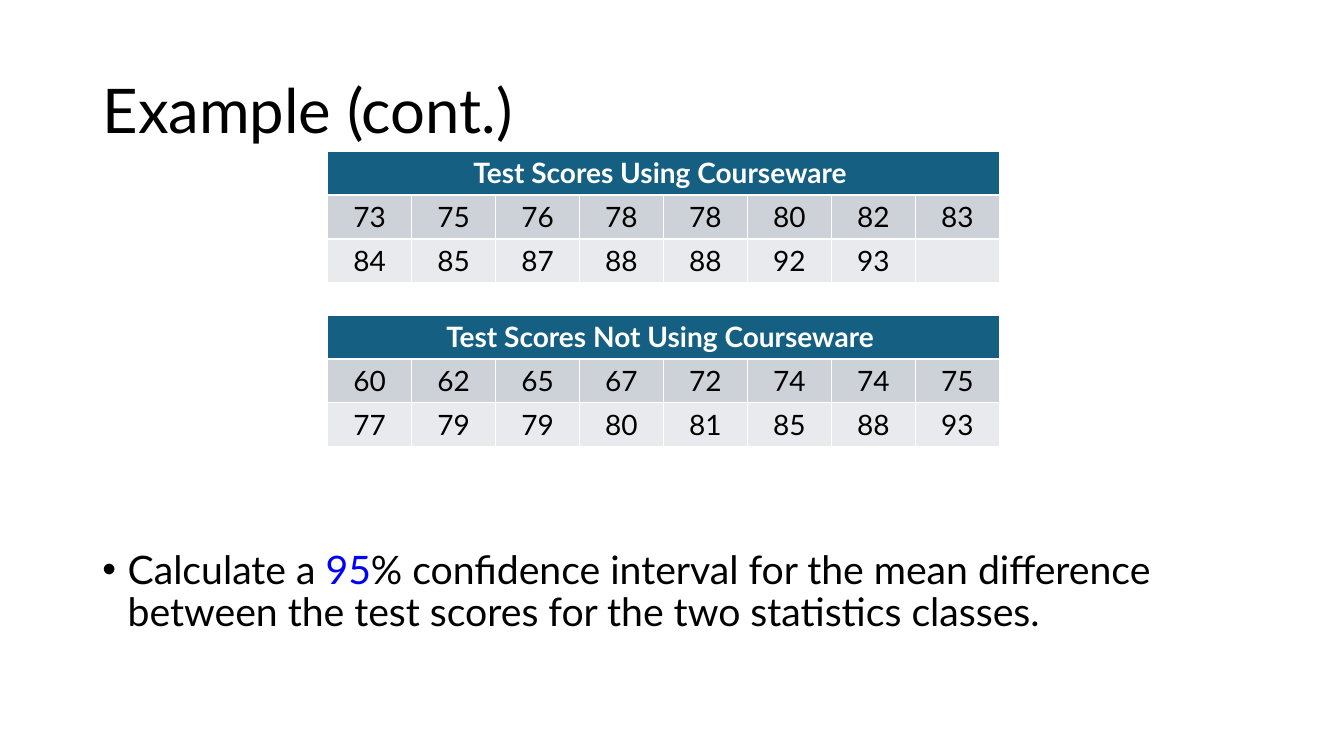
from dataclasses import dataclass

from pptx import Presentation
from pptx.dml.color import RGBColor as Rgb
from pptx.enum.text import MSO_ANCHOR as Anchor, MSO_AUTO_SIZE as Fit, PP_ALIGN as Align
from pptx.util import Pt


@dataclass(frozen=True)
class Theme:
    """Colours, font and type sizes of the slide."""
    font: str = "Lato"
    ink: str = "000000"
    mark: str = "0000FF"
    pale: str = "FFFFFF"
    head: str = "156082"
    bands: tuple = ("CCD2D8", "E8EAED")
    title: int = 44
    body: int = 28
    cell: int = 20


THEME = Theme()
USING = [[73, 75, 76, 78, 78, 80, 82, 83], [84, 85, 87, 88, 88, 92, 93, ""]]
OTHER = [[60, 62, 65, 67, 72, 74, 74, 75], [77, 79, 79, 80, 81, 85, 88, 93]]


def write(para, text, size, color=THEME.ink, bold=False, align=Align.LEFT):
    """Add a formatted run to a paragraph."""
    para.alignment = align
    run = para.add_run()
    run.text = text
    font = run.font
    font.name, font.size, font.bold = THEME.font, Pt(size), bold
    font.color.rgb = Rgb.from_string(color)


def place(holder, left, top, width, height, anchor):
    """Move a placeholder and return its first paragraph."""
    holder.left, holder.top = Pt(left), Pt(top)
    holder.width, holder.height = Pt(width), Pt(height)
    frame = holder.text_frame
    frame.auto_size, frame.vertical_anchor = Fit.NONE, anchor
    para = frame.paragraphs[0]
    para.line_spacing, para.space_before = 0.9, Pt(0)
    return para


def paint(cell, fill, text, **style):
    """Fill a table cell and centre its text."""
    cell.fill.solid()
    cell.fill.fore_color.rgb = Rgb.from_string(fill)
    if text:
        write(cell.text_frame.paragraphs[0], text, THEME.cell, align=Align.CENTER, **style)


def scores(slide, top, title, rows):
    """Add a score table under a merged heading."""
    count, width, height = len(rows[0]), 60, 31.2
    lines = len(rows) + 1
    table = slide.shapes.add_table(
        lines, count, Pt(234), Pt(top), Pt(count * width), Pt(lines * height)
    ).table
    for col in table.columns:
        col.width = Pt(width)
    for row in table.rows:
        row.height = Pt(height)
    table.cell(0, 0).merge(table.cell(0, count - 1))
    paint(table.cell(0, 0), THEME.head, title, color=THEME.pale, bold=True)
    for r, (row, band) in enumerate(zip(rows, THEME.bands), 1):
        for c, score in enumerate(row):
            paint(table.cell(r, c), band, str(score))


def main():
    """Build and save the slide."""
    deck = Presentation()
    deck.slide_width, deck.slide_height = Pt(960), Pt(540)
    slide = deck.slides.add_slide(deck.slide_layouts[1])
    title, body = slide.placeholders

    para = place(title, 66, 28.8, 828, 104.4, Anchor.MIDDLE)
    write(para, "Example (cont.)", THEME.title)

    para = place(body, 66, 144, 828, 342.7, Anchor.TOP)
    body.text_frame.margin_top = Pt(249)
    props = para._p.get_or_add_pPr()
    props.set("marL", str(Pt(18)))
    props.set("indent", str(Pt(-18)))
    write(para, "Calculate a ", THEME.body)
    write(para, "95", THEME.body, color=THEME.mark)
    write(para, "% confidence interval for the mean difference between "
          "the test scores for the two statistics classes.", THEME.body)

    scores(slide, 108, "Test Scores Using Courseware ", USING)
    scores(slide, 225, "Test Scores Not Using Courseware ", OTHER)
    deck.save("out.pptx")


if __name__ == "__main__":
    main()
